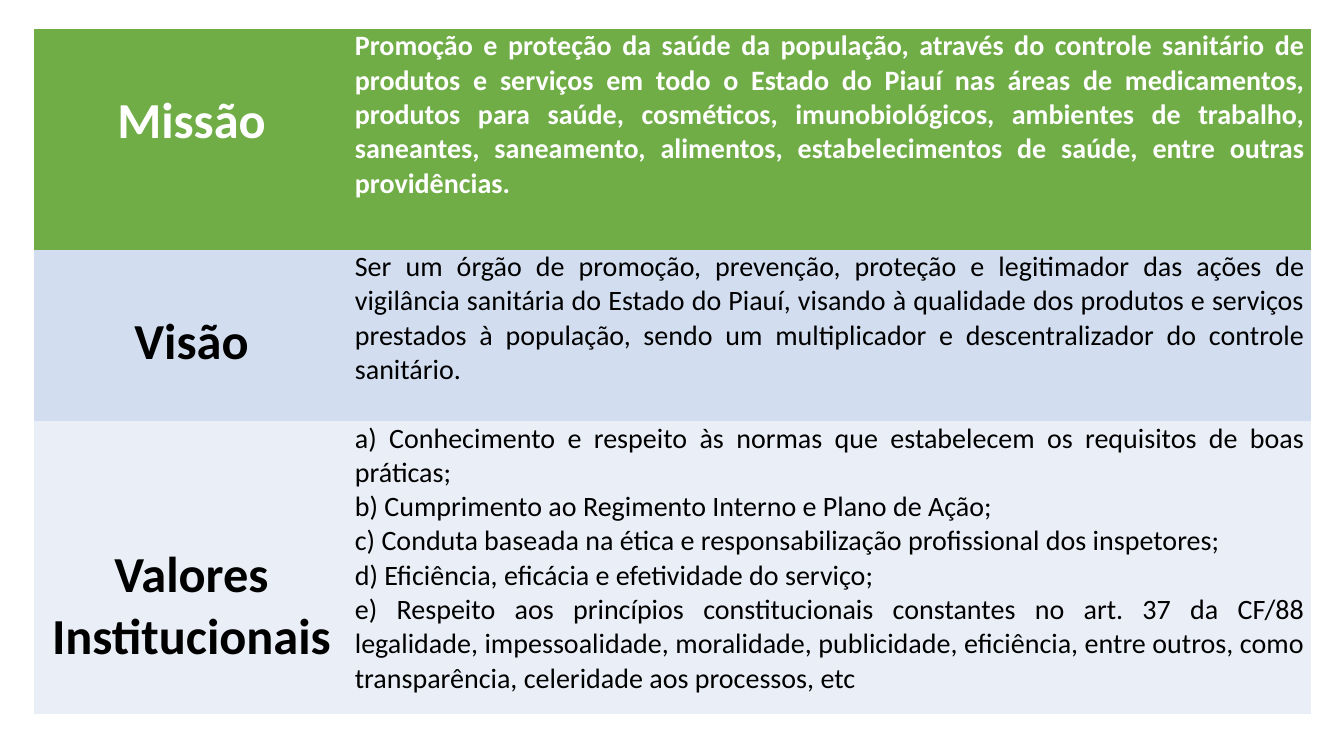
from pptx import Presentation
from pptx.dml.color import RGBColor
from pptx.enum.text import MSO_ANCHOR, PP_ALIGN as Align
from pptx.oxml.ns import qn
from pptx.util import Inches, Pt

WHITE = RGBColor(0xFF, 0xFF, 0xFF)
BLACK = RGBColor(0x00, 0x00, 0x00)
GREEN = RGBColor(0x70, 0xAD, 0x47)
BLUE = RGBColor(0xD2, 0xDE, 0xEF)
PALE_BLUE = RGBColor(0xEA, 0xEF, 0xF7)
NO_STYLE_NO_GRID = "{2D5ABB26-0587-4C30-8999-92F81FD0307C}"

MISSION = [
    "Promoção e proteção da saúde da população, através do controle sanitário de "
    "produtos e serviços em todo o Estado do Piauí nas áreas de medicamentos, "
    "produtos para saúde, cosméticos, imunobiológicos, ambientes de trabalho, "
    "saneantes, saneamento, alimentos, estabelecimentos de saúde, entre outras "
    "providências.",
]
VISION = [
    "Ser um órgão de promoção, prevenção, proteção e legitimador das ações de "
    "vigilância sanitária do Estado do Piauí, visando à qualidade dos produtos e "
    "serviços prestados à população, sendo um multiplicador e descentralizador do "
    "controle sanitário.",
]
VALUES = [
    "a) Conhecimento e respeito às normas que estabelecem os requisitos de boas práticas;",
    "b) Cumprimento ao Regimento Interno e Plano de Ação;",
    "c) Conduta baseada na ética e responsabilização profissional dos inspetores;",
    "d) Eficiência, eficácia e efetividade do serviço;",
    "e) Respeito aos princípios constitucionais constantes no art. 37 da CF/88 "
    "legalidade, impessoalidade, moralidade, publicidade, eficiência, entre outros, "
    "como transparência, celeridade aos processos, etc",
]

# Heading, its offset from the row top, statements, row height, fill, text colour, bold
SECTIONS = [
    ("Missão", 0.61, MISSION, 2.19, GREEN, WHITE, True),
    ("Visão", 0.61, VISION, 1.7, BLUE, BLACK, False),
    ("Valores Institucionais", 1.22, VALUES, 2.9, PALE_BLUE, BLACK, False),
]


class IdentitySlide:
    """Holds the style and the current slide."""

    font = "Calibri"
    side_margin = 0.06

    def __init__(self, deck):
        self.slide = deck.slides.add_slide(deck.slide_layouts[6])

    def table(self, left, top, widths, heights):
        frame = self.slide.shapes.add_table(
            len(heights), len(widths), Inches(left), Inches(top),
            Inches(sum(widths)), Inches(sum(heights)))
        for style in frame.element.iter(qn("a:tableStyleId")):
            style.text = NO_STYLE_NO_GRID
        for column, width in zip(frame.table.columns, widths):
            column.width = Inches(width)
        for row, height in zip(frame.table.rows, heights):
            row.height = Inches(height)
        return frame.table

    def cell(self, cell, lines, fill, align, offset=0, **font):
        cell.fill.solid()
        cell.fill.fore_color.rgb = fill
        layout = {
            "margin_left": Inches(self.side_margin),
            "margin_right": Inches(self.side_margin),
            "margin_top": Inches(offset),
            "margin_bottom": 0,
            "vertical_anchor": MSO_ANCHOR.TOP,
        }
        for name, value in layout.items():
            setattr(cell, name, value)
        cell.text_frame.text = "\n".join(lines)
        for paragraph in cell.text_frame.paragraphs:
            paragraph.alignment = align
            for run in paragraph.runs:
                self.format(run.font, **font)

    def format(self, font, color, **values):
        font.color.rgb = color
        for name, value in {"name": self.font, **values}.items():
            setattr(font, name, value)


def main():
    deck = Presentation()
    deck.slide_width, deck.slide_height = Inches(13.33), Inches(7.5)
    identity = IdentitySlide(deck)

    # Mission, vision and values table
    heights = [section[3] for section in SECTIONS]
    table = identity.table(0.34, 0.29, [3.12, 9.54], heights)
    for row, section in zip(table.rows, SECTIONS):
        heading, offset, statements, _, fill, color, bold = section
        heading_cell, statement_cell = row.cells
        identity.cell(heading_cell, [heading], fill, Align.CENTER, offset,
                      color=color, size=Pt(36), bold=True)
        identity.cell(statement_cell, statements, fill, Align.JUSTIFY,
                      color=color, size=Pt(20), bold=bold)

    deck.save("out.pptx")


if __name__ == "__main__":
    main()
